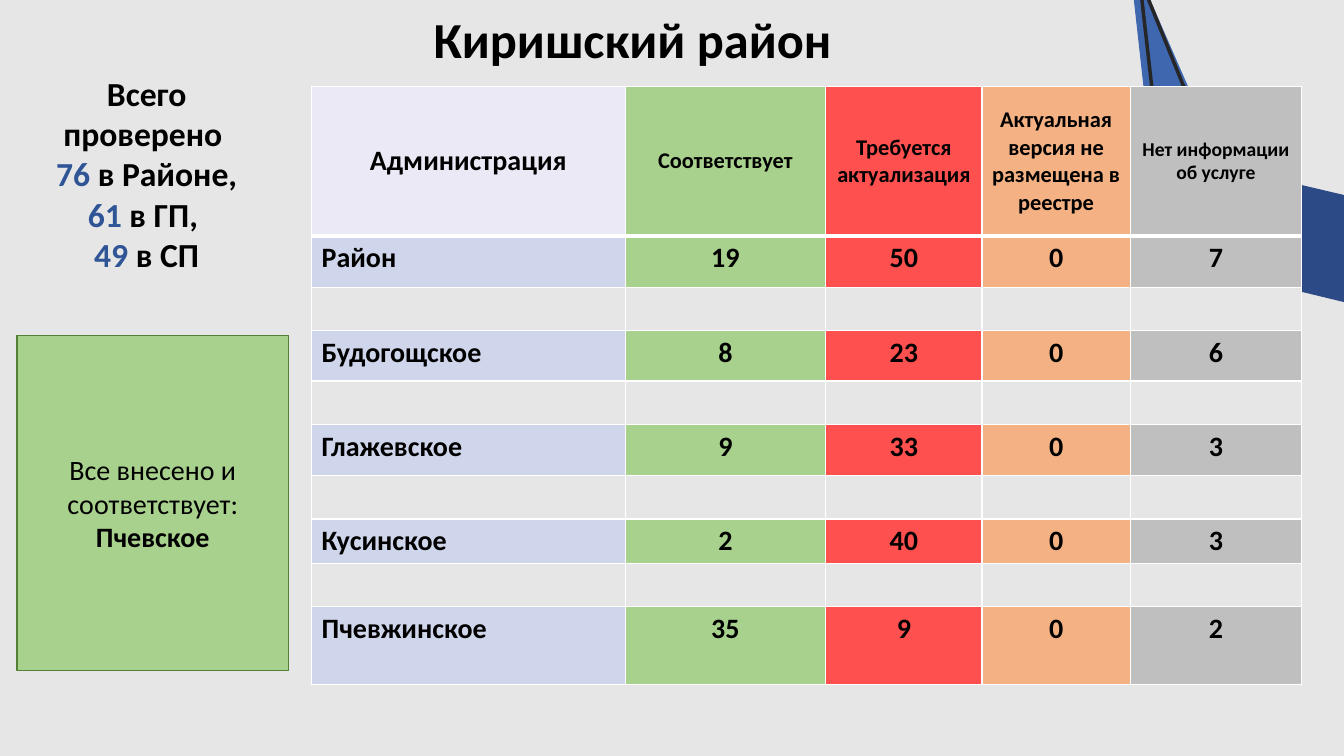
import pptx
import pptx.util
import pptx.dml.color
import pptx.enum.shapes
import pptx.enum.text
import pptx.oxml
import pptx.oxml.ns

Inches, Pt = pptx.util.Inches, pptx.util.Pt
CENTER = pptx.enum.text.PP_ALIGN.CENTER
LEFT = pptx.enum.text.PP_ALIGN.LEFT
MIDDLE = pptx.enum.text.MSO_ANCHOR.MIDDLE
FONT = "Calibri"
BACKGROUND, BLACK, WHITE, BLUE = "E7E6E6", "000000", "FFFFFF", "2F5597"
GREEN = "A9D18E"

# Content
TITLE = "Киришский район"
TOTALS = [
    [("Всего проверено ", BLACK)],
    [("76 ", BLUE), ("в Районе, ", BLACK), ("61 ", BLUE), ("в ГП, ", BLACK)],
    [("49 ", BLUE), ("в СП", BLACK)],
]
COMPLIANT = [("Все внесено и соответствует:", False), ("Пчевское", True)]

# Heading, heading size, heading fill, body fill, width
COLUMNS = [
    ("Администрация", 20, "EBE9F5", "CFD5EA", 3.11),
    ("Соответствует", 16, GREEN, GREEN, 1.99),
    ("Требуется актуализация", 16, "FF5050", "FF5050", 1.55),
    ("Актуальная версия не размещена в реестре", 16, "F4B183", "F4B183", 1.47),
    ("Нет информации об услуге", 14, "BFBFBF", "BFBFBF", 1.7),
]
HEADER_HEIGHT, GAP_HEIGHT = 1.48, 0.43
ROWS = [
    (("Район", 19, 50, 0, 7), 0.51),
    (("Будогощское", 8, 23, 0, 6), 0.5),
    (("Глажевское", 9, 33, 0, 3), 0.51),
    (("Кусинское", 2, 40, 0, 3), 0.43),
    (("Пчевжинское", 35, 9, 0, 2), 0.77),
]

# Points, fill, line
RIBBONS = [
    ([(14.63, 2.24), (12.12, 1.65), (11.53, 2.56), (14.33, 3.24)], "2C4A86", None),
    ([(11.53, 2.56), (11.19, -0.5), (12.64, 2.82)], "3E67AF", None),
    ([(11.62, 2.59), (11.3, -0.23), (12.57, 2.91)], None, "262626"),
]


def rgb(value):
    return pptx.dml.color.RGBColor.from_string(value)


def paint(fill, color):
    fill.solid()
    fill.fore_color.rgb = rgb(color)


def style(p, size, bold=True, align=CENTER):
    p.alignment = align
    p.font.name, p.font.size, p.font.bold = FONT, Pt(size), bold
    p.font.color.rgb = rgb(BLACK)


def border(cell, side, width):
    cell._tc.get_or_add_tcPr().append(pptx.oxml.parse_xml(
        f'<a:ln{side} {pptx.oxml.ns.nsdecls("a")} w="{Pt(width)}"><a:solidFill>'
        f'<a:srgbClr val="{WHITE}"/></a:solidFill></a:ln{side}>'))


def add_ribbon(s, points, fill, line):
    corners = [(Inches(x), Inches(y)) for x, y in points]
    builder = s.shapes.build_freeform(*corners[0])
    builder.add_line_segments(corners[1:], close=True)
    sp = builder.convert_to_shape()
    sp.shadow.inherit = False
    if fill:
        paint(sp.fill, fill)
    else:
        sp.fill.background()
    if line:
        sp.line.color.rgb = rgb(line)
        sp.line.width = Pt(2.5)
    else:
        sp.line.fill.background()


def add_table(s):
    # Data rows alternate with empty gap rows
    blank = ("",) * len(COLUMNS)
    rows = [([c[0] for c in COLUMNS], HEADER_HEIGHT)]
    for i, row in enumerate(ROWS):
        if i:
            rows.append((blank, GAP_HEIGHT))
        rows.append(row)
    table = s.shapes.add_table(
        len(rows), len(COLUMNS), Inches(3.09), Inches(0.86),
        Inches(sum(c[4] for c in COLUMNS)), Inches(sum(h for _, h in rows))).table
    table.horz_banding = False
    for j, column in enumerate(COLUMNS):
        table.columns[j].width = Inches(column[4])
    for i, (values, height) in enumerate(rows):
        table.rows[i].height = Inches(height)
        for j, (_, head_size, head_fill, body_fill, _) in enumerate(COLUMNS):
            cell = table.cell(i, j)
            header, gap = i == 0, values is blank
            for side in "LRTB":
                thick = (i == 0 and side == "B") or (i == 1 and side == "T")
                border(cell, side, 3 if thick else 1)
            paint(cell.fill, head_fill if header else BACKGROUND if gap else body_fill)
            if header:
                cell.vertical_anchor = MIDDLE
            cell.text = str(values[j])
            style(cell.text_frame.paragraphs[0],
                  head_size if header else 18 if gap else 20,
                  align=CENTER if header or j else LEFT)


def main():
    prs = pptx.Presentation()
    prs.slide_width, prs.slide_height = Inches(13.33), Inches(7.5)
    s = prs.slides.add_slide(prs.slide_layouts[6])
    paint(s.background.fill, BACKGROUND)

    # Corner decoration and table
    for ribbon in RIBBONS:
        add_ribbon(s, *ribbon)
    add_table(s)

    # Title
    tf = s.shapes.add_textbox(Inches(4.18), Inches(0.03), Inches(4.19), Inches(0.71)).text_frame
    tf.word_wrap = False
    tf.text = TITLE
    style(tf.paragraphs[0], 36)

    # Compliant settlements
    sp = s.shapes.add_shape(pptx.enum.shapes.MSO_SHAPE.RECTANGLE,
                            Inches(0.17), Inches(3.33), Inches(2.69), Inches(3.32))
    sp.shadow.inherit = False
    paint(sp.fill, GREEN)
    sp.line.color.rgb = rgb("538035")
    sp.line.width = Pt(1)
    tf = sp.text_frame
    tf.word_wrap = True
    tf.vertical_anchor = MIDDLE
    for i, (text, bold) in enumerate(COMPLIANT):
        p = tf.add_paragraph() if i else tf.paragraphs[0]
        p.text = text
        style(p, 20, bold)

    # Totals checked
    tf = s.shapes.add_textbox(Inches(0.39), Inches(0.67), Inches(2.13), Inches(2.42)).text_frame
    tf.word_wrap = True
    for i, runs in enumerate(TOTALS):
        p = tf.add_paragraph() if i else tf.paragraphs[0]
        style(p, 24)
        for text, color in runs:
            r = p.add_run()
            r.text = text
            r.font.color.rgb = rgb(color)

    prs.save("out.pptx")


if __name__ == "__main__":
    main()
